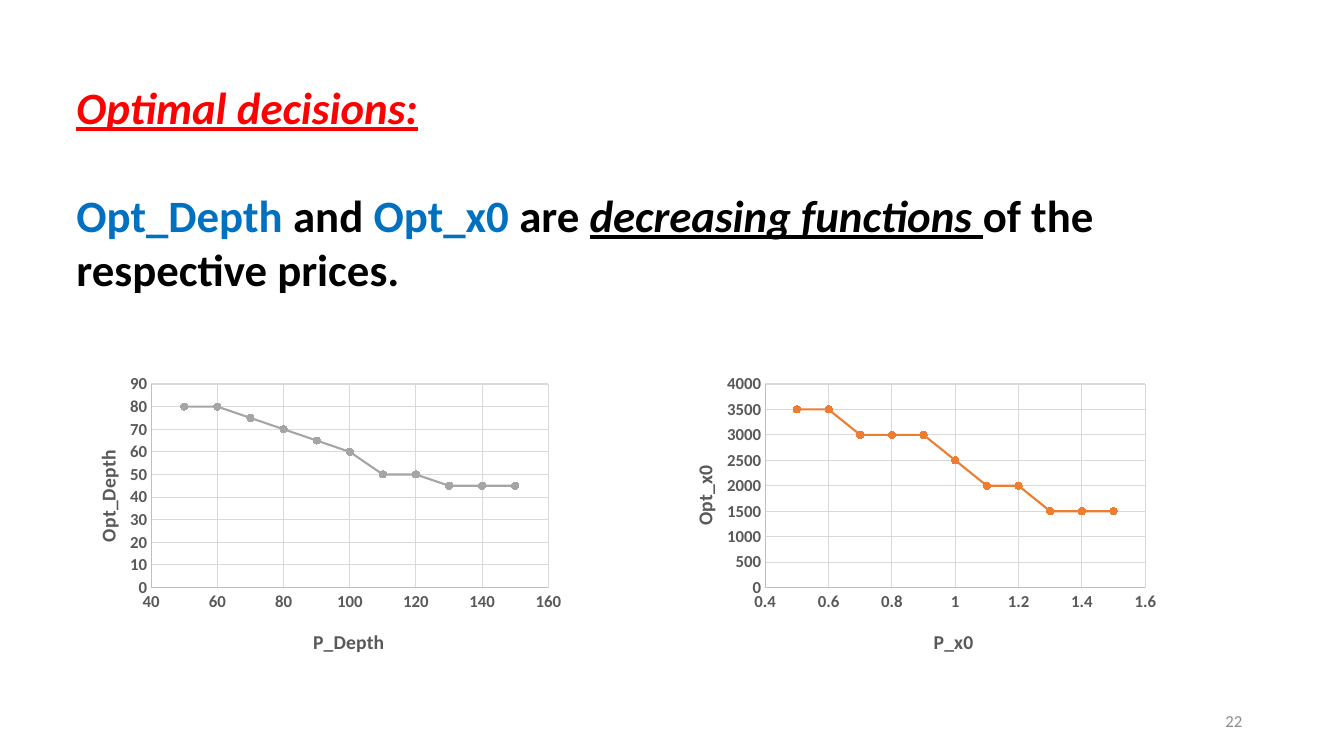
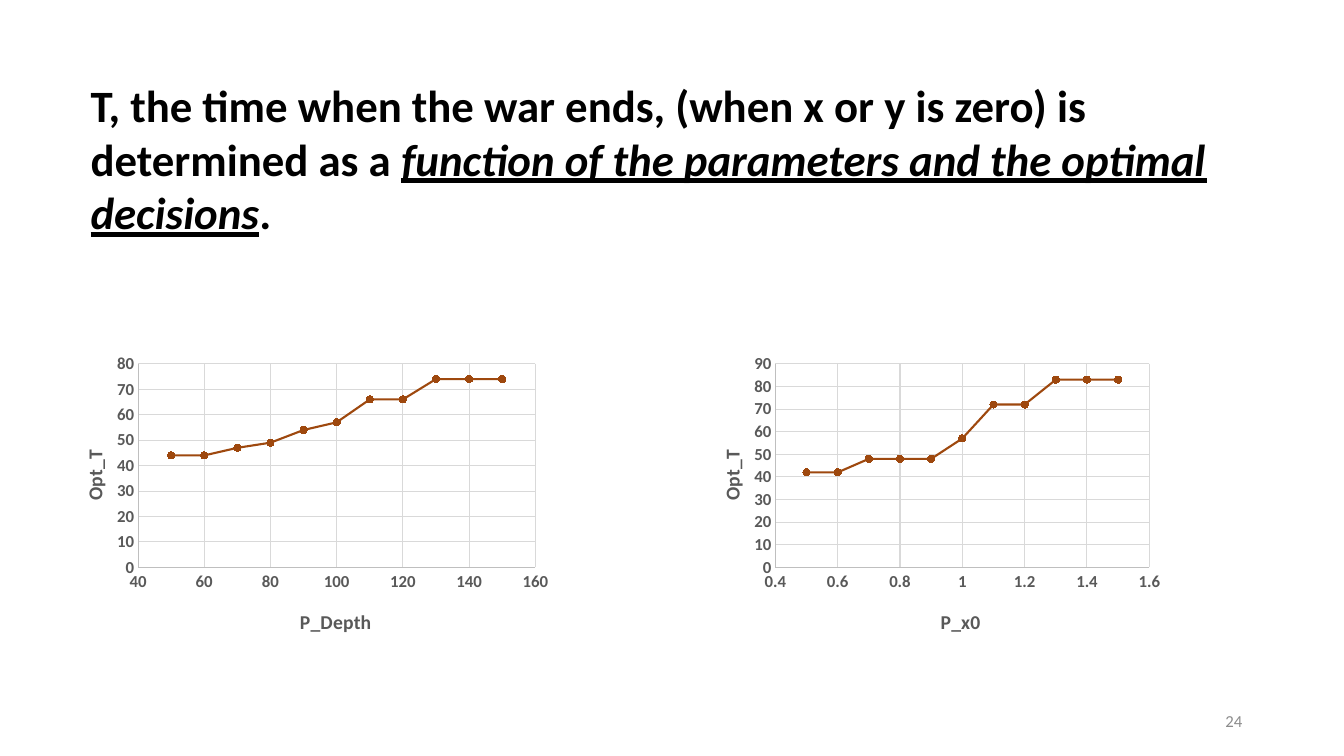
"""Build two slides of optimal decision charts."""
import pptx
import pptx.chart.data
import pptx.dml.color
import pptx.enum.chart
import pptx.enum.text
import pptx.oxml
import pptx.oxml.ns
import pptx.util

Inches, Pt = pptx.util.Inches, pptx.util.Pt
RGBColor = pptx.dml.color.RGBColor
XL = pptx.enum.chart

RED = RGBColor(0xFF, 0x00, 0x00)
BLUE = RGBColor(0x00, 0x70, 0xC0)
BLACK = RGBColor(0x00, 0x00, 0x00)
FOOTER_GRAY = RGBColor(0x8C, 0x8C, 0x8C)
AXIS_TEXT = RGBColor(0x59, 0x59, 0x59)
AXIS_LINE = RGBColor(0xBF, 0xBF, 0xBF)
GRID = RGBColor(0xD9, 0xD9, 0xD9)
SILVER = RGBColor(0xA5, 0xA5, 0xA5)
ORANGE = RGBColor(0xED, 0x7D, 0x31)
BROWN = RGBColor(0x9E, 0x48, 0x0E)

HEADING = {"name": "Calibri", "size": Pt(32), "bold": True}
EMPHASIS = {**HEADING, "italic": True, "underline": True}
FOOTER = {"name": "Calibri", "size": Pt(12)}
TICKS = {"name": "Calibri", "size": Pt(12), "bold": True}
AXIS_TITLE = {**TICKS, "size": Pt(14)}

CHART_H = 3
PLOT_TOP, PLOT_H, PLOT_RIGHT = 0.15, 2.02, 0.22
CHAR_W = 0.1

DEPTH_AXIS = ("P_Depth", 40, 160, 20)
X0_AXIS = ("P_x0", 0.4, 1.6, 0.2)
DEPTH_PRICES = list(range(50, 151, 10))
X0_PRICES = [n / 10 for n in range(5, 16)]


def set_font(font, fmt, color):
    """Apply a format dict and a colour to a font."""
    for key, value in fmt.items():
        setattr(font, key, value)
    font.color.rgb = color


def set_line(line, color, width):
    """Give a line its colour and width in points."""
    line.color.rgb = color
    line.width = Pt(width)


def add_text(slide, box, paragraphs, fmt):
    """Add a wrapped text box from paragraphs of (text, format, colour) runs."""
    sp = slide.shapes.add_textbox(*map(Inches, box))
    tf = sp.text_frame
    for key, value in fmt.items():
        setattr(tf, key, value)
    for i, runs in enumerate(paragraphs):
        p = tf.add_paragraph() if i else tf.paragraphs[0]
        if i:
            p.space_before = Pt(39)
        for text, run_fmt, color in runs:
            r = p.add_run()
            r.text = text
            set_font(r.font, run_fmt, color)
    return tf


def add_footer(slide, number):
    """Add the slide number at the lower right."""
    tf = add_text(slide, (9.42, 6.95, 3, 0.4), [[(number, FOOTER, FOOTER_GRAY)]],
                  {"word_wrap": True, "vertical_anchor": pptx.enum.text.MSO_ANCHOR.MIDDLE})
    tf.paragraphs[0].alignment = pptx.enum.text.PP_ALIGN.RIGHT


def add_heading(slide, box, paragraphs):
    """Add the large text above the charts."""
    add_text(slide, box, paragraphs,
             {"word_wrap": True, "auto_size": pptx.enum.text.MSO_AUTO_SIZE.SHAPE_TO_FIT_TEXT})


def set_layout(parent, index, values, inner=False):
    """Place a chart part by fractions of the chart."""
    for old in parent.findall(pptx.oxml.ns.qn("c:layout")):
        parent.remove(old)
    target = '<c:layoutTarget val="inner"/>' if inner else ""
    modes = "".join(f'<c:{k}Mode val="edge"/>' for k in "xy")
    sizes = "".join(f'<c:{k} val="{v:.4f}"/>' for k, v in zip("xywh", values))
    parent.insert(index, pptx.oxml.parse_xml(
        f'<c:layout {pptx.oxml.ns.nsdecls("c")}><c:manualLayout>'
        f'{target}{modes}{sizes}</c:manualLayout></c:layout>'))


def style_axis(axis, title, low, high, step, position, rotation):
    """Format an axis and place its title."""
    scale = {"minimum_scale": low, "maximum_scale": high, "major_unit": step,
             "has_major_gridlines": True, "major_tick_mark": XL.XL_TICK_MARK.NONE,
             "minor_tick_mark": XL.XL_TICK_MARK.NONE}
    for key, value in scale.items():
        setattr(axis, key, value)
    set_line(axis.format.line, AXIS_LINE, 0.75)
    set_line(axis.major_gridlines.format.line, GRID, 0.75)
    axis.tick_labels.number_format = "General"
    axis.tick_labels.number_format_is_linked = False
    set_font(axis.tick_labels.font, TICKS, AXIS_TEXT)
    tf = axis.axis_title.text_frame
    r = tf.paragraphs[0].add_run()
    r.text = title
    set_font(r.font, AXIS_TITLE, AXIS_TEXT)
    element = axis.axis_title._element
    body = element.find(".//" + pptx.oxml.ns.qn("a:bodyPr"))
    body.set("rot", str(rotation))
    body.set("vert", "horz")
    set_layout(element, 1, position)


def add_scatter(slide, box, x_axis, y_axis, xs, ys, color, plot_left=0.84):
    """Add a line scatter chart with its plot placed inside the box."""
    data = pptx.chart.data.XyChartData()
    points = data.add_series("Series 1")
    for x, y in zip(xs, ys):
        points.add_data_point(x, y)
    chart = slide.shapes.add_chart(XL.XL_CHART_TYPE.XY_SCATTER_LINES,
                                   *map(Inches, box), data).chart
    chart.has_legend = False
    chart.has_title = False
    set_font(chart.font, {"name": "Calibri", "size": Pt(10)}, BLACK)
    plot = chart.plots[0]
    plot.vary_by_categories = False
    series = plot.series[0]
    series.smooth = False
    set_line(series.format.line, color, 1.5)
    marker = series.marker
    marker.style = XL.XL_MARKER_STYLE.CIRCLE
    marker.size = 5
    marker.format.fill.solid()
    marker.format.fill.fore_color.rgb = color
    set_line(marker.format.line, color, 0.75)

    w = box[2]
    plot_w = w - plot_left - PLOT_RIGHT
    x_left = plot_left + plot_w / 2 - 0.05 - CHAR_W * len(x_axis[0]) / 2
    y_top = PLOT_TOP + PLOT_H / 2 + 0.06 - CHAR_W * len(y_axis[0]) / 2
    style_axis(chart.category_axis, *x_axis, (x_left / w, 2.54 / CHART_H), 0)
    style_axis(chart.value_axis, *y_axis, (0.24 / w, y_top / CHART_H), -5400000)
    area = chart._chartSpace.find(".//" + pptx.oxml.ns.qn("c:plotArea"))
    set_layout(area, 0, (plot_left / w, PLOT_TOP / CHART_H,
                         plot_w / w, PLOT_H / CHART_H), inner=True)


def add_decision_slide(prs):
    """Add the slide on optimal decisions and prices."""
    slide = prs.slides.add_slide(prs.slide_layouts[6])
    add_footer(slide, "22")
    add_heading(slide, (0.66, 0.74, 11.98, 2.26), [
        [("Optimal decisions:", EMPHASIS, RED)],
        [("Opt_Depth ", HEADING, BLUE), ("and ", HEADING, BLACK),
         ("Opt_x0 ", HEADING, BLUE), ("are ", HEADING, BLACK),
         ("decreasing functions ", EMPHASIS, BLACK),
         ("of the respective prices.", HEADING, BLACK)]])
    add_scatter(slide, (0.66, 3.66, 5, CHART_H), DEPTH_AXIS, ("Opt_Depth", 0, 90, 10),
                DEPTH_PRICES, [80, 80, 75, 70, 65, 60, 50, 50, 45, 45, 45], SILVER)
    add_scatter(slide, (6.58, 3.66, 5, CHART_H), X0_AXIS, ("Opt_x0", 0, 4000, 500),
                X0_PRICES, [3500, 3500, 3000, 3000, 3000, 2500, 2000, 2000, 1500, 1500, 1500],
                ORANGE, plot_left=1.01)


def add_time_slide(prs):
    """Add the slide on the time when the war ends."""
    slide = prs.slides.add_slide(prs.slide_layouts[6])
    add_footer(slide, "24")
    add_heading(slide, (0.8, 0.72, 11.74, 1.72), [
        [("T, the time when the war ends, (when x or y is zero) is determined as a ",
          HEADING, BLACK),
         ("function of the parameters and the optimal decisions", EMPHASIS, BLACK),
         (".", HEADING, BLACK)]])
    add_scatter(slide, (0.53, 3.46, 5, CHART_H), DEPTH_AXIS, ("Opt_T", 0, 80, 10),
                DEPTH_PRICES, [44, 44, 47, 49, 54, 57, 66, 66, 74, 74, 74], BROWN)
    add_scatter(slide, (6.85, 3.46, 4.77, CHART_H), X0_AXIS, ("Opt_T", 0, 90, 10),
                X0_PRICES, [42, 42, 48, 48, 48, 57, 72, 72, 83, 83, 83], BROWN)


def main():
    """Build and save the presentation."""
    prs = pptx.Presentation()
    prs.slide_width, prs.slide_height = Inches(13.33), Inches(7.5)
    add_decision_slide(prs)
    add_time_slide(prs)
    prs.save("out.pptx")


if __name__ == "__main__":
    main()
